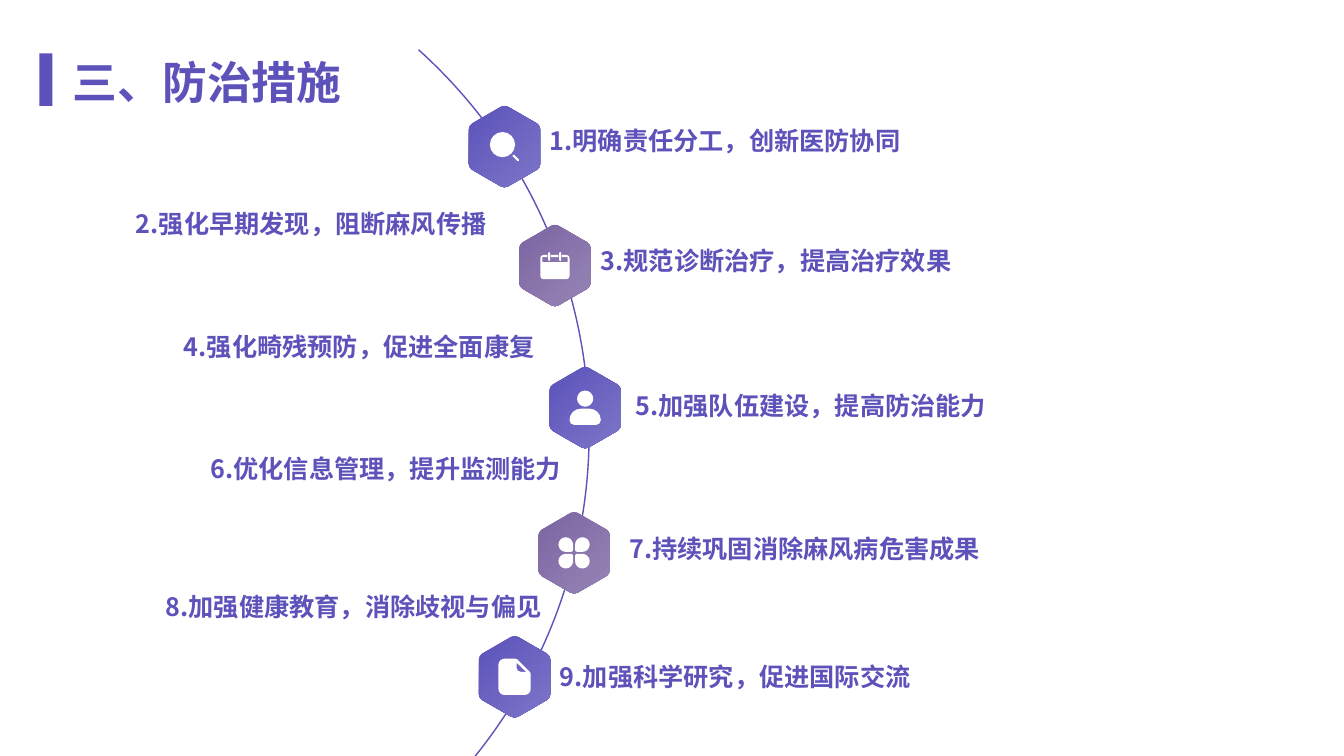
from dataclasses import dataclass

import pptx
import pptx.dml.color
import pptx.enum.shapes
import pptx.enum.text
import pptx.oxml.ns
import pptx.util

# The slide is a grid of 133.33 columns by 75 rows; all lengths are in cells.
COLS, ROWS = 133.33, 75
CELL = pptx.util.Inches(7.5) / ROWS
FONT = "Noto Sans CJK SC"
PURPLE, WHITE = "5C52BA", "FFFFFF"
VIOLET_FILL, MAUVE_FILL = (PURPLE, "7D75C8"), ("7C65A2", "9684B5")
HEX_W, HEX_H = 7.1, 8.1
MSO_SHAPE = pptx.enum.shapes.MSO_SHAPE
AUTO_SIZE = pptx.enum.text.MSO_AUTO_SIZE

Point = tuple[float, float]
Corner = list[Point]  # one point if sharp, four Bezier points if round
Contour = list[Corner]


@dataclass
class Station:
    left: float
    top: float
    fill: tuple[str, str]
    icon: list[Contour]
    icon_w: float
    icon_h: float


@dataclass
class Measure:
    left: float
    top: float
    width: float
    text: str


def cells(n: float) -> pptx.util.Emu:
    return pptx.util.Emu(round(n * CELL))


def color(value: str) -> pptx.dml.color.RGBColor:
    return pptx.dml.color.RGBColor.from_string(value)


# ---- Outlines ----
def rounded(points: list[Point], *radii: float) -> Contour:
    """Round each corner of a polygon; radii are repeated in turn."""
    contour = []
    for i, (x, y) in enumerate(points):
        radius = radii[i % len(radii)]
        if not radius:
            contour.append([(x, y)])
            continue
        corner = []
        for (nx, ny), pulls in ((points[i - 1], (1, 0.45)),
                                (points[(i + 1) % len(points)], (0.45, 1))):
            share = radius / ((nx - x) ** 2 + (ny - y) ** 2) ** 0.5
            corner += [(x + (nx - x) * share * k, y + (ny - y) * share * k)
                       for k in pulls]
        contour.append(corner)
    return contour


def box(x: float, y: float, w: float, h: float, *radii: float) -> Contour:
    return rounded([(x, y), (x + w, y), (x + w, y + h), (x, y + h)], *(radii or (0,)))


def petals(size: float, gap: float) -> list[Contour]:
    """Four round petals, each with a tighter corner towards the centre."""
    step = size + gap
    result = []
    for inner, (col, row) in enumerate([(1, 1), (0, 1), (0, 0), (1, 0)]):
        radii = [size / 2] * 4
        radii[inner] = 0.2
        result.append(box(col * step, row * step, size, size, *radii))
    return result


HEXAGON = rounded([(HEX_W / 2, -0.1), (HEX_W, 1.95), (HEX_W, HEX_H - 1.95),
                   (HEX_W / 2, HEX_H + 0.1), (0, HEX_H - 1.95), (0, 1.95)], 0.4)
MAGNIFIER = [box(0, 0, 2.5, 2.5, 1.25),
             rounded([(2.2, 2.35), (2.35, 2.2), (2.95, 2.8), (2.8, 2.95)], 0.1)]
CALENDAR = [box(0, 0.3, 2.9, 2.4, 0.3), box(0.2, 0.5, 2.5, 0.5),
            box(0.7, 0.3, 0.35, 0.2), box(1.8, 0.3, 0.35, 0.2),
            box(0.78, 0, 0.2, 0.9, 0.1), box(1.88, 0, 0.2, 0.9, 0.1)]
PERSON = [box(0.75, 0, 1.6, 1.6, 0.8),
          box(0, 1.8, 3.1, 1.6, 1.1, 1.1, 0.45, 0.45)]
DOCUMENT = [rounded([(0, 0), (1.8, 0), (3.2, 1.4), (3.2, 3.6), (0, 3.6)],
                    0.6, 0.1, 0.1, 0.6, 0.6),
            rounded([(1.8, 0.4), (1.8, 1.3), (2.75, 1.3)], 0, 0.4, 0)]

STATIONS = [
    Station(46.5, 10.5, VIOLET_FILL, MAGNIFIER, 2.9, 2.9),
    Station(51.5, 22.3, MAUVE_FILL, CALENDAR, 2.9, 2.7),
    Station(54.5, 36.4, VIOLET_FILL, PERSON, 3.1, 3.4),
    Station(53.4, 50.8, MAUVE_FILL, petals(1.45, 0.2), 3.1, 3.1),
    Station(47.5, 63.1, VIOLET_FILL, DOCUMENT, 3.2, 3.6),
]
MEASURES = [
    Measure(53.55, 11.9, 57.9, "明确责任分工，创新医防协同"),
    Measure(12.5, 20.15, 37.7, "强化早期发现，阻断麻风传播"),
    Measure(58.6, 23.85, 38.8, "规范诊断治疗，提高治疗效果"),
    Measure(17.25, 32.4, 40.6, "强化畸残预防，促进全面康复"),
    Measure(62.05, 38.2, 37.6, "加强队伍建设，提高防治能力"),
    Measure(19.9, 44.5, 38, "优化信息管理，提升监测能力"),
    Measure(61.45, 52.4, 42.2, "持续巩固消除麻风病危害成果"),
    Measure(15.45, 58.15, 41.1, "加强健康教育，消除歧视与偏见"),
    Measure(54.55, 65.1, 42.2, "加强科学研究，促进国际交流"),
]


# ---- Drawing ----
def write(tf, text: str, *, size: float, spacing: float = 1.0) -> None:
    p = tf.paragraphs[0]
    p.alignment = pptx.enum.text.PP_ALIGN.LEFT
    p.line_spacing = spacing
    r = p.add_run()
    r.text = text
    r.font.size = pptx.util.Pt(size)
    r.font.bold = True
    r.font.name = FONT
    r.font.color.rgb = color(PURPLE)
    ea = r.font._element.makeelement(pptx.oxml.ns.qn("a:ea"), {"typeface": FONT})
    r.font._element.find(pptx.oxml.ns.qn("a:latin")).addnext(ea)


def bend_corners(sp, contours: list[Contour]) -> None:
    """Turn the last three points of every round corner into one curve."""
    qn = pptx.oxml.ns.qn
    outline = next(sp._element.iter(qn("a:path")))
    nodes = [node for node in outline if node.tag != qn("a:close")]
    start = 0
    for corner in (c for contour in contours for c in contour):
        if len(corner) == 4:
            curve = outline.makeelement(qn("a:cubicBezTo"), {})
            nodes[start].addnext(curve)
            for node in nodes[start + 1:start + 4]:
                curve.append(node[0])
                outline.remove(node)
        start += len(corner)


def draw_outline(slide, left: float, top: float, contours: list[Contour], *fills: str) -> None:
    """Draw one freeform with a solid fill, or a gradient for two colours."""
    builder = None
    for contour in contours:
        points = [(cells(left + x), cells(top + y)) for corner in contour for x, y in corner]
        if builder is None:
            builder = slide.shapes.build_freeform(*points[0], scale=1.0)
        else:
            builder.move_to(*points[0])
        builder.add_line_segments(points[1:], close=True)
    sp = builder.convert_to_shape()
    bend_corners(sp, contours)
    sp.shadow.inherit = False
    sp.line.fill.background()
    if len(fills) == 1:
        sp.fill.solid()
        sp.fill.fore_color.rgb = color(fills[0])
        return
    sp.fill.gradient()
    sp.fill.gradient_angle = 315
    for position, (stop, value) in enumerate(zip(sp.fill.gradient_stops, fills)):
        stop.position = position
        stop.color.rgb = color(value)


def draw_station(slide, s: Station) -> None:
    draw_outline(slide, s.left, s.top, [HEXAGON], *s.fill)
    draw_outline(slide, s.left + (HEX_W - s.icon_w) / 2,
                 s.top + (HEX_H - s.icon_h) / 2, s.icon, WHITE)


def draw_measure(slide, number: int, m: Measure) -> None:
    sp = slide.shapes.add_textbox(*map(cells, (m.left, m.top, m.width, 4)))
    tf = sp.text_frame
    tf.word_wrap = True
    tf.auto_size = AUTO_SIZE.SHAPE_TO_FIT_TEXT
    write(tf, f"{number}.{m.text}", size=18)


def draw_title(slide, text: str) -> None:
    sp = slide.shapes.title
    sp.left, sp.top, sp.width, sp.height = map(cells, (7.2, 5.3, 60.7, 5.1))
    tf = sp.text_frame
    tf.margin_left = tf.margin_right = tf.margin_top = tf.margin_bottom = 0
    tf.vertical_anchor = pptx.enum.text.MSO_ANCHOR.MIDDLE
    tf.auto_size = AUTO_SIZE.NONE
    write(tf, text, size=32, spacing=1.1)
    bar = slide.shapes.add_shape(MSO_SHAPE.RECTANGLE, *map(cells, (3.9, 5.3, 1.3, 5.2)))
    bar.shadow.inherit = False
    bar.fill.solid()
    bar.fill.fore_color.rgb = color(PURPLE)
    bar.line.fill.background()


def draw_arc(slide) -> None:
    arc = slide.shapes.add_shape(MSO_SHAPE.ARC, *map(cells, (-43.85, -8.2, 102.3, 102.3)))
    arc.shadow.inherit = False
    arc.fill.background()
    arc.line.color.rgb = color(PURPLE)
    arc.line.width = pptx.util.Pt(1)
    for i, degrees in enumerate((312, 39)):
        arc.adjustments[i] = degrees * 0.6


def main() -> None:
    prs = pptx.Presentation()
    prs.slide_width, prs.slide_height = cells(COLS), cells(ROWS)
    slide = prs.slides.add_slide(prs.slide_layouts[5])
    draw_arc(slide)
    for station in STATIONS:
        draw_station(slide, station)
    draw_title(slide, "三、防治措施")
    for number, measure in enumerate(MEASURES, 1):
        draw_measure(slide, number, measure)
    prs.save("out.pptx")


if __name__ == "__main__":
    main()
